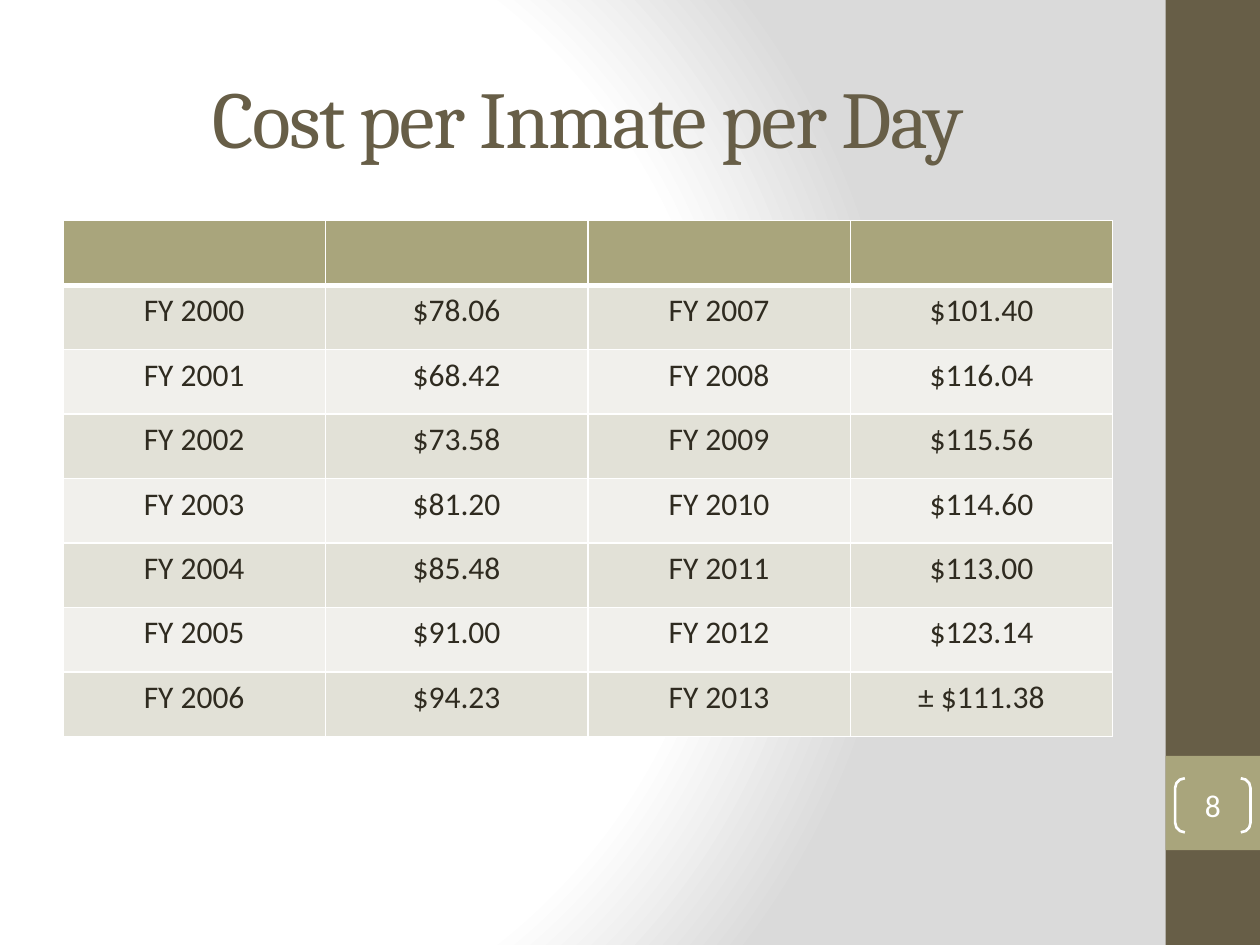
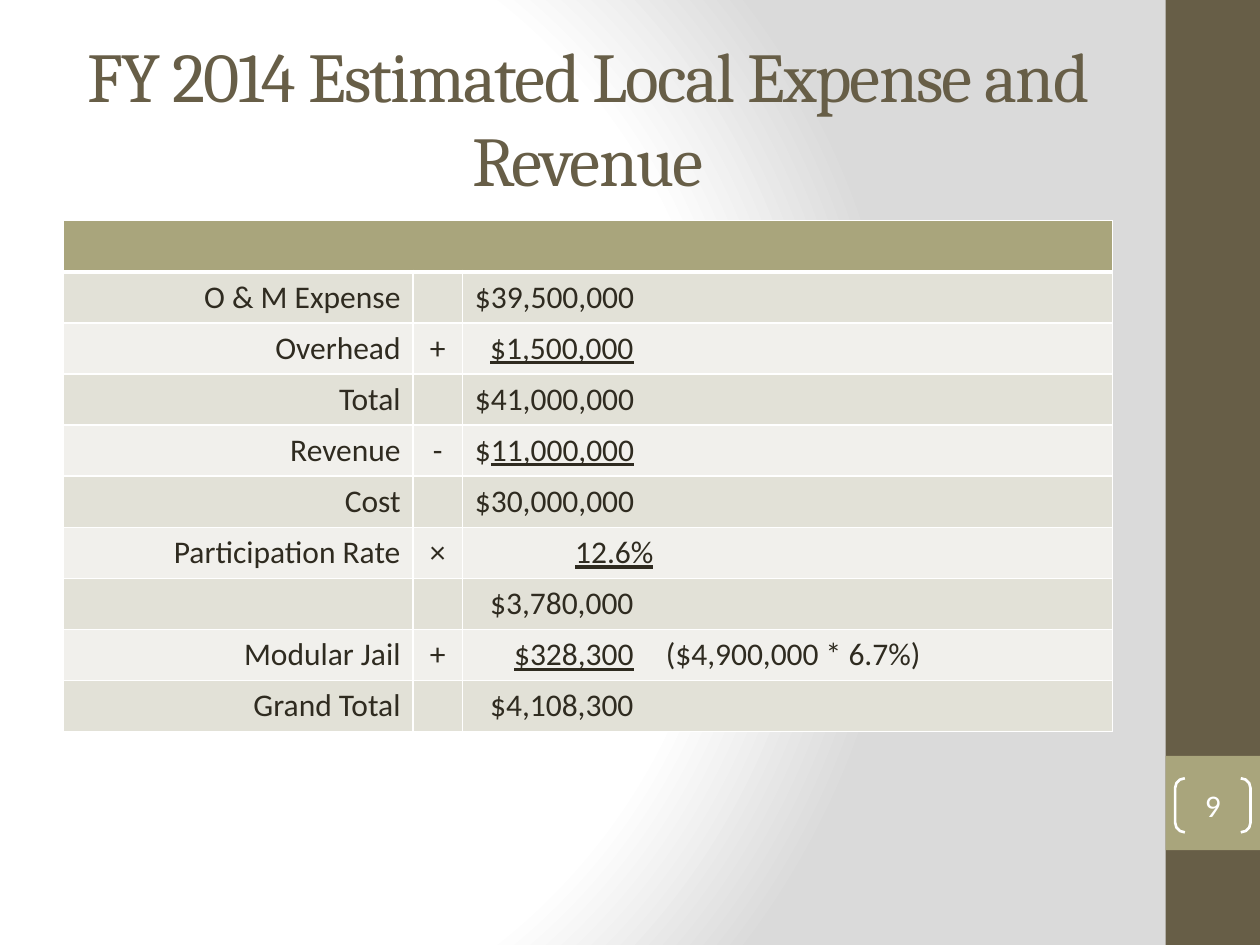
from dataclasses import dataclass

from pptx import Presentation
from pptx.dml.color import RGBColor
from pptx.enum.shapes import MSO_SHAPE
from pptx.enum.text import MSO_ANCHOR, MSO_AUTO_SIZE, PP_ALIGN
from pptx.oxml import parse_xml
from pptx.oxml.ns import nsdecls, qn
from pptx.util import Cm, Pt

LEFT, CENTER, RIGHT = PP_ALIGN.LEFT, PP_ALIGN.CENTER, PP_ALIGN.RIGHT
MIDDLE = MSO_ANCHOR.MIDDLE
NO_AUTOFIT = MSO_AUTO_SIZE.NONE
RECTANGLE, BRACKETS = MSO_SHAPE.RECTANGLE, MSO_SHAPE.DOUBLE_BRACKET
TITLE_ONLY = 5

# ---------- content ----------
FIRST_FISCAL_YEAR = 2000
DAILY_COSTS = [
    "$78.06", "$68.42", "$73.58", "$81.20", "$85.48", "$91.00", "$94.23",
    "$101.40", "$116.04", "$115.56", "$114.60", "$113.00", "$123.14", "± $111.38",
]

# label, operator, amount pieces as (text, underlined); a tab leads to the amount column
BUDGET = [
    ("O & M Expense", "", [("\t$39,500,000", False)]),
    ("Overhead", "+", [("\t$1,500,000", True)]),
    ("Total", "", [("\t$41,000,000", False)]),
    ("Revenue", "-", [("\t$", False), ("11,000,000", True)]),
    ("Cost", "", [("\t$30,000,000", False)]),
    ("Participation Rate", "×", [("\t12.6%", True)]),
    ("", "", [("\t$3,780,000", False)]),
    ("Modular Jail", "+", [("\t$328,300", True), ("\t($4,900,000 * 6.7%)", False)]),
    ("Grand Total", "", [("\t$4,108,300", False)]),
]


@dataclass(frozen=True)
class Theme:
    dark: str = "675E47"
    accent: str = "A9A57C"
    text: str = "2F2B20"
    white: str = "FFFFFF"
    shade: str = "DADADA"
    stripes: tuple = ("E2E1D7", "F1F0EC")
    heading_font: str = "Cambria"
    body_font: str = "Calibri"
    title_size: int = 46
    long_title_size: int = 40
    body_size: int = 18
    rule: int = 1
    header_rule: int = 3


THEME = Theme()

# ---------- layout, in centimetres ----------
SLIDE_W, SLIDE_H = 25.4, 19.05
BAND_W = 1.9
BAND_X = SLIDE_W - BAND_W
NUMBER_Y = 15.24
BRACKET_W, BRACKET_H = 1.52, 1.09
CONTENT_X, CONTENT_W = 1.27, 21.16
TITLE_Y, TITLE_H = 0.76, 3.18
TABLE_Y = 4.45
COST_ROW_H, BUDGET_ROW_H = 1.3, 1.03
LABEL_W, OPERATOR_W = 7.06, 0.99
AMOUNT_TAB, PERCENT_TAB, NOTE_TAB = 3.2, 3.6, 3.85


def color(code):
    return RGBColor.from_string(code)


def style(paragraph, font_name, size, code, align):
    paragraph.alignment = align
    paragraph.font.name = font_name
    paragraph.font.size = Pt(size)
    paragraph.font.color.rgb = color(code)


def paint_background(master):
    """Fill the master with a circular gradient, white on the left."""
    master.background.fill.solid()
    solid = master.element.find(".//" + qn("p:bgPr")).find(qn("a:solidFill"))
    stops = "".join(
        f'<a:gs pos="{percent * 1000}"><a:srgbClr val="{code}"/></a:gs>'
        for percent, code in ((0, THEME.white), (75, THEME.white), (100, THEME.shade))
    )
    solid.getparent().replace(solid, parse_xml(
        f'<a:gradFill {nsdecls("a")} rotWithShape="1"><a:gsLst>{stops}</a:gsLst>'
        '<a:path path="circle"><a:fillToRect l="20000" t="50000" r="100000" b="50000"/>'
        "</a:path></a:gradFill>"
    ))


def add_bands(master, slide):
    """Draw the side bands, then move them to the back of the master."""
    bands = ((0, SLIDE_H, THEME.dark), (NUMBER_Y, BAND_W, THEME.accent))
    for position, (top, height, code) in enumerate(bands, start=2):
        band = slide.shapes.add_shape(
            RECTANGLE, Cm(BAND_X), Cm(top), Cm(BAND_W), Cm(height))
        band.shadow.inherit = False
        band.fill.solid()
        band.fill.fore_color.rgb = color(code)
        band.line.fill.background()
        master.element.cSld.spTree.insert(position, band.element)


def add_slide(prs, heading, size):
    slide = prs.slides.add_slide(prs.slide_layouts[TITLE_ONLY])
    title = slide.shapes.title
    title.left, title.top = Cm(CONTENT_X), Cm(TITLE_Y)
    title.width, title.height = Cm(CONTENT_W), Cm(TITLE_H)
    title.text_frame.text = heading
    title.text_frame.auto_size = NO_AUTOFIT
    title.text_frame.vertical_anchor = MIDDLE
    paragraph = title.text_frame.paragraphs[0]
    style(paragraph, THEME.heading_font, size, THEME.dark, CENTER)
    paragraph._p.pPr.find(qn("a:defRPr")).set("spc", "-100")
    return slide


def add_page_number(slide, number):
    brackets = slide.shapes.add_shape(
        BRACKETS,
        Cm(BAND_X + (BAND_W - BRACKET_W) / 2), Cm(NUMBER_Y + 0.45),
        Cm(BRACKET_W), Cm(BRACKET_H))
    brackets.adjustments[0] = 0.18
    brackets.shadow.inherit = False
    brackets.fill.background()
    brackets.line.color.rgb = color(THEME.white)
    brackets.line.width = Pt(1.5)
    frame = brackets.text_frame
    frame.margin_left = frame.margin_right = frame.margin_top = frame.margin_bottom = 0
    frame.vertical_anchor = MIDDLE
    frame.text = str(number)
    style(frame.paragraphs[0], THEME.body_font, THEME.body_size, THEME.white, CENTER)


def paint_cell(cell, code, top_rule, bottom_rule):
    properties = cell._tc.get_or_add_tcPr()
    rules = {"lnL": THEME.rule, "lnR": THEME.rule, "lnT": top_rule, "lnB": bottom_rule}
    for side, points in rules.items():
        properties.append(parse_xml(
            f'<a:{side} {nsdecls("a")} w="{Pt(points)}"><a:solidFill>'
            f'<a:srgbClr val="{THEME.white}"/></a:solidFill></a:{side}>'))
    cell.fill.solid()
    cell.fill.fore_color.rgb = color(code)


def add_striped_table(slide, rows, widths, row_height, aligns):
    """Add a table with an empty header row; a cell is a list of (text, underlined)."""
    table = slide.shapes.add_table(
        len(rows) + 1, len(widths), Cm(CONTENT_X), Cm(TABLE_Y),
        Cm(CONTENT_W), Cm(row_height * (len(rows) + 1))).table
    for column, width in zip(table.columns, widths):
        column.width = Cm(width)
    for row_index, row in enumerate([[[]] * len(widths)] + rows):
        is_header = row_index == 0
        fill = THEME.accent if is_header else THEME.stripes[(row_index - 1) % 2]
        top_rule = THEME.header_rule if row_index == 1 else THEME.rule
        bottom_rule = THEME.header_rule if is_header else THEME.rule
        for column_index, (pieces, align) in enumerate(zip(row, aligns)):
            cell = table.cell(row_index, column_index)
            paint_cell(cell, fill, top_rule, bottom_rule)
            paragraph = cell.text_frame.paragraphs[0]
            style(paragraph, THEME.body_font, THEME.body_size, THEME.text, align)
            for text, underlined in pieces:
                run = paragraph.add_run()
                run.text = text
                if underlined:
                    run.font.underline = True
    return table


def set_amount_tabs(cell):
    """Right-align the amount at a tab stop and start any note at a second one."""
    amount_tab = PERCENT_TAB if cell.text_frame.text.endswith("%") else AMOUNT_TAB
    cell.text_frame.paragraphs[0]._p.pPr.find(qn("a:defRPr")).addprevious(parse_xml(
        f'<a:tabLst {nsdecls("a")}><a:tab pos="{Cm(amount_tab)}" algn="r"/>'
        f'<a:tab pos="{Cm(NOTE_TAB)}" algn="l"/></a:tabLst>'))


def plain(text):
    return [(text, False)] if text else []


def build_daily_cost(slide):
    half = len(DAILY_COSTS) // 2
    years = [f"FY {FIRST_FISCAL_YEAR + i}" for i in range(len(DAILY_COSTS))]
    rows = [
        [plain(text) for i in (first, first + half) for text in (years[i], DAILY_COSTS[i])]
        for first in range(half)
    ]
    add_striped_table(slide, rows, [CONTENT_W / 4] * 4, COST_ROW_H, [CENTER] * 4)


def build_budget(slide):
    rows = [[plain(label), plain(operator), amount] for label, operator, amount in BUDGET]
    widths = [LABEL_W, OPERATOR_W, CONTENT_W - LABEL_W - OPERATOR_W]
    table = add_striped_table(slide, rows, widths, BUDGET_ROW_H, [RIGHT, CENTER, LEFT])
    table.cell(0, 0).merge(table.cell(0, len(widths) - 1))
    for row_index in range(1, len(rows) + 1):
        set_amount_tabs(table.cell(row_index, len(widths) - 1))


def main():
    prs = Presentation()
    prs.slide_width, prs.slide_height = Cm(SLIDE_W), Cm(SLIDE_H)
    paint_background(prs.slide_master)

    daily_cost = add_slide(prs, "Cost per Inmate per Day", THEME.title_size)
    add_bands(prs.slide_master, daily_cost)
    build_daily_cost(daily_cost)
    add_page_number(daily_cost, 8)

    budget = add_slide(
        prs, "FY 2014 Estimated Local Expense and Revenue", THEME.long_title_size)
    build_budget(budget)
    add_page_number(budget, 9)

    prs.save("out.pptx")


if __name__ == "__main__":
    main()
